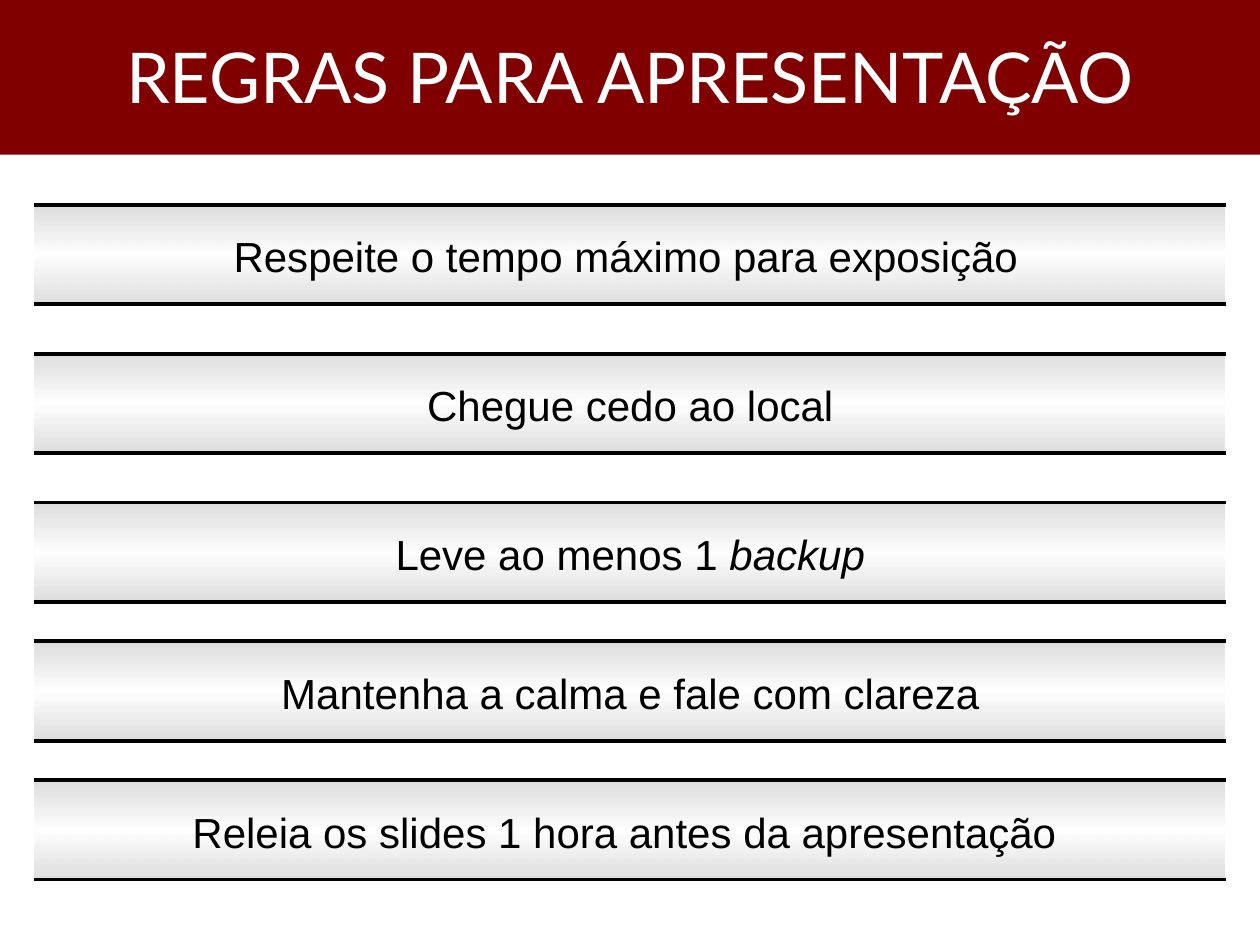
from lxml import etree
from pptx import Presentation
from pptx import util as u
from pptx.dml.color import RGBColor
from pptx.enum import shapes, text
from pptx.oxml import ns

BAR_LEFT, BAR_WIDTH, BAR_HEIGHT = 0.69, 24.0, 2.0
RULE_RIGHT = 24.71
NARROW, WIDE = (1.3, 22.81), (0.51, 24.21)
BAND = [(0, "D5D5D5", 80), (50, "FFFFFF", 81), (100, "D5D5D5", 80)]
RULES = [
    (4.13, WIDE, [("Respeite o tempo máximo para exposição", False)]),
    (7.13, NARROW, [("Chegue cedo ao local", False)]),
    (10.13, NARROW, [("Leve ao menos 1 ", False), ("backup", True)]),
    (12.93, NARROW, [("Mantenha a calma e fale com clareza", False)]),
    (15.73, NARROW, [("Releia os slides 1 hora antes da apresentação ", False)]),
]


def paint(color, value):
    color.rgb = RGBColor.from_string(value)


def write(frame, runs, font, size, color):
    frame.word_wrap = True
    paragraph = frame.paragraphs[0]
    paragraph.alignment = text.PP_ALIGN.CENTER
    for words, italic in runs:
        run = paragraph.add_run()
        run.text = words
        run.font.name = font
        run.font.size = u.Pt(size)
        if italic:
            run.font.italic = True
        paint(run.font.color, color)


def add_box(slide, left, top, width, height):
    box = slide.shapes.add_shape(
        shapes.MSO_SHAPE.RECTANGLE, u.Cm(left), u.Cm(top), u.Cm(width), u.Cm(height))
    box.shadow.inherit = False
    box.line.fill.background()
    return box


def add_title(slide, words):
    banner = add_box(slide, 0, -0.08, 25.4, 3.2)
    banner.fill.solid()
    paint(banner.fill.fore_color, "800000")
    banner.text_frame.vertical_anchor = text.MSO_ANCHOR.MIDDLE
    write(banner.text_frame, [(words, False)], "Lato", 40, "FFFFFF")


def add_band(slide, top):
    band = add_box(slide, BAR_LEFT, top, BAR_WIDTH, BAR_HEIGHT)
    band.fill.gradient()
    band.fill.gradient_angle = 270
    stops = band.element.spPr.find(".//" + ns.qn("a:gsLst"))
    for old in list(stops):
        stops.remove(old)
    for position, value, opacity in BAND:
        stop = etree.SubElement(stops, ns.qn("a:gs"), pos=str(position * 1000))
        color = etree.SubElement(stop, ns.qn("a:srgbClr"), val=value)
        etree.SubElement(color, ns.qn("a:alpha"), val=str(opacity * 1000))


def add_edge(slide, y):
    edge = slide.shapes.add_connector(
        shapes.MSO_CONNECTOR.STRAIGHT, u.Cm(BAR_LEFT), u.Cm(y), u.Cm(RULE_RIGHT), u.Cm(y))
    edge.line.width = u.Pt(2.25)
    paint(edge.line.color, "000000")
    etree.SubElement(edge.element.spPr, ns.qn("a:effectLst"))


def add_rule(slide, top, span, runs):
    add_band(slide, top)
    left, width = span
    label = slide.shapes.add_textbox(u.Cm(left), u.Cm(top + 0.4), u.Cm(width), u.Cm(1.27))
    label.text_frame.auto_size = text.MSO_AUTO_SIZE.SHAPE_TO_FIT_TEXT
    write(label.text_frame, runs, "Arial", 24, "000000")
    add_edge(slide, top + BAR_HEIGHT)
    add_edge(slide, top)


def main():
    deck = Presentation()
    deck.slide_width, deck.slide_height = u.Cm(25.4), u.Cm(19.05)
    slide = deck.slides.add_slide(deck.slide_layouts[6])
    add_title(slide, "REGRAS PARA APRESENTAÇÃO")
    for top, span, runs in RULES:
        add_rule(slide, top, span, runs)
    deck.save("out.pptx")


if __name__ == "__main__":
    main()
